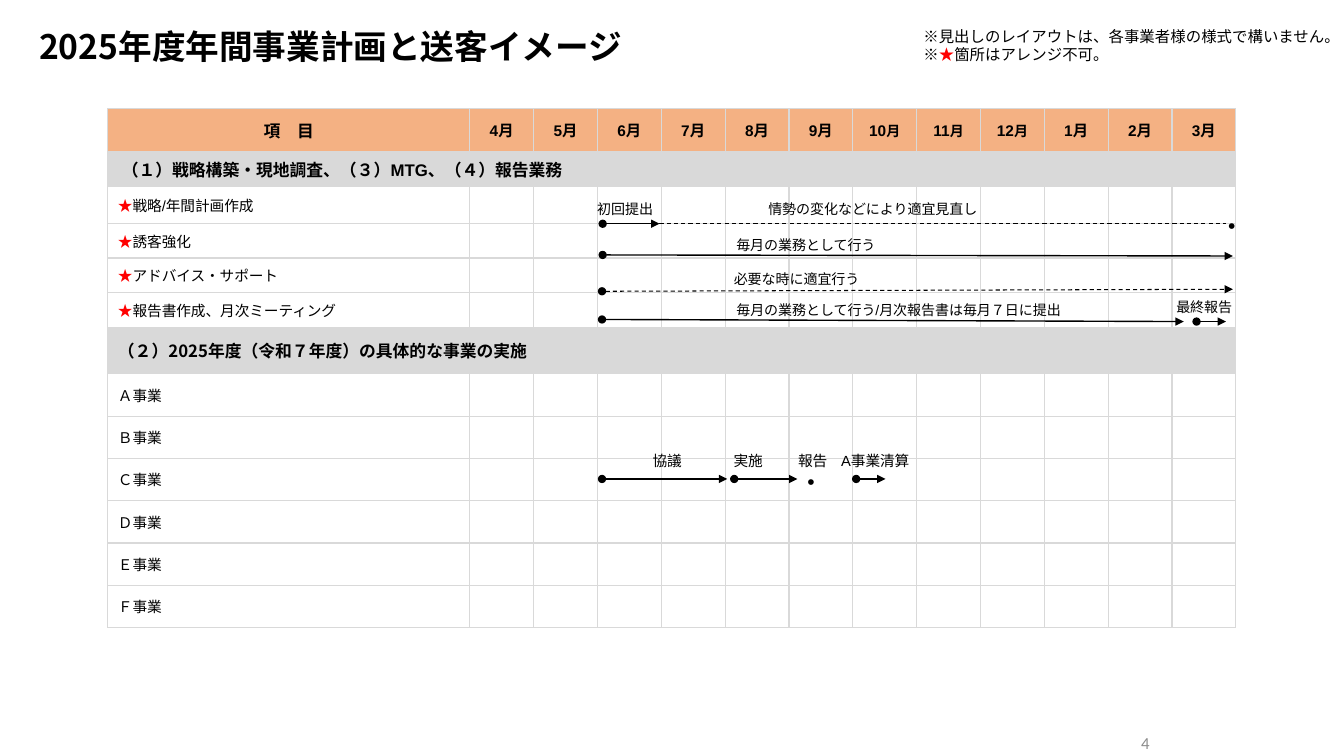
from dataclasses import dataclass
from itertools import accumulate

from lxml.etree import SubElement
from pptx import Presentation
from pptx.dml.color import RGBColor
from pptx.enum.dml import MSO_LINE
from pptx.enum.shapes import MSO_CONNECTOR
from pptx.enum.text import MSO_ANCHOR, MSO_AUTO_SIZE, PP_ALIGN
from pptx.oxml.ns import qn
from pptx.util import Inches, Pt


@dataclass(frozen=True)
class Theme:
    ink: str = "000000"
    star: str = "FF0000"
    header: str = "F4B183"
    band: str = "D9D9D9"
    white: str = "FFFFFF"
    muted: str = "8C8C8C"
    body: str = "Arial"
    gothic: str = "Noto Sans CJK JP"
    number: str = "Calibri"
    title_size: float = 24
    dot_size: float = 15
    section_size: float = 12
    month_size: float = 11
    item_size: float = 10.5
    label_size: float = 10


THEME = Theme()
LEFT, CENTER, RIGHT = PP_ALIGN.LEFT, PP_ALIGN.CENTER, PP_ALIGN.RIGHT

TITLE = "2025年度年間事業計画と送客イメージ"
NOTES = ["※見出しのレイアウトは、各事業者様の様式で構いません。", "※★箇所はアレンジ不可。"]
PAGE_NUMBER = "4"
HEADING = "項　目"
MONTHS = [4, 5, 6, 7, 8, 9, 10, 11, 12, 1, 2, 3]
SECTIONS = [
    (" （１）戦略構築・現地調査、（３）MTG、（４）報告業務", THEME.body,
     ["★戦略/年間計画作成", "★誘客強化", "★アドバイス・サポート", "★報告書作成、月次ミーティング"]),
    ("（２）2025年度（令和７年度）の具体的な事業の実施", THEME.gothic,
     [f"{letter}事業" for letter in "ＡＢＣＤＥＦ"]),
]

# Chart coordinates: months after the start of April, table rows from the top.
# Arrows: start month, start row, end month, end row, dashed, arrowheads
ARROWS = [
    (2.08, 3, 2.97, 3, False, True),
    (2.97, 3, 11.84, 3, True, False),
    (2.08, 3.91, 11.95, 3.94, False, True),
    (2.07, 4.97, 11.95, 4.91, True, True),
    (2.07, 5.77, 11.18, 5.83, False, True),
    (11.38, 5.83, 11.84, 5.83, False, True),
    (2.07, 9.48, 4.03, 9.48, False, True),
    (4.14, 9.48, 5.13, 9.48, False, True),
    (6.05, 9.48, 6.51, 9.48, False, True),
]
# Labels: text, month of the left edge or centre, top row, width in months, alignment, size
LABELS = [
    ("初回提出", 2.43, 2.24, 1.6, CENTER, THEME.label_size),
    ("情勢の変化などにより適宜見直し", 6.31, 2.24, 3.9, CENTER, THEME.label_size),
    ("毎月の業務として行う", 4.11, 3.24, 3.9, LEFT, THEME.label_size),
    ("必要な時に適宜行う", 4.07, 4.21, 3.9, LEFT, THEME.label_size),
    ("毎月の業務として行う/月次報告書は毎月７日に提出", 4.11, 5.11, 5.7, LEFT, THEME.label_size),
    ("最終報告", 11.5, 5.03, 1.6, CENTER, THEME.label_size),
    ("協議", 3.09, 8.74, 2.5, CENTER, THEME.item_size),
    ("実施", 4.36, 8.74, 1.6, CENTER, THEME.item_size),
    ("報告", 5.37, 8.74, 1.6, CENTER, THEME.item_size),
    ("A事業清算", 6.35, 8.74, 1.6, CENTER, THEME.item_size),
]
DOTS = [(5.13, 9.12), (11.72, 2.57)]

SLIDE_WIDTH, SLIDE_HEIGHT = 13.33, 7.5
TABLE_LEFT, TABLE_TOP, TABLE_WIDTH, ITEM_WIDTH = 1.07, 1.08, 11.19, 3.59
MONTH_WIDTH = (TABLE_WIDTH - ITEM_WIDTH) / len(MONTHS)
ROW_HEIGHTS = [0.42, 0.35, 0.37, 0.34, 0.34, 0.35, 0.46] + [0.42] * 6
ROW_TOPS = list(accumulate(ROW_HEIGHTS, initial=TABLE_TOP))


def chart_point(month, row):
    """Turn months and rows into inches on the slide."""
    index = int(row)
    x = TABLE_LEFT + ITEM_WIDTH + month * MONTH_WIDTH
    return x, ROW_TOPS[index] + (row - index) * ROW_HEIGHTS[index]


def style_run(run, size, face, color=THEME.ink, bold=False):
    run.font.size = Pt(size)
    run.font.name = face
    run.font.bold = bold
    run.font.color.rgb = RGBColor.from_string(color)
    SubElement(run.font._element, qn("a:ea")).set("typeface", THEME.gothic)


def write(paragraph, text, size, face, color=THEME.ink, bold=False, align=LEFT):
    """Write one line, with any star in red."""
    paragraph.alignment = align
    before, star, after = text.partition("★")
    for part in filter(None, (before, star, after)):
        run = paragraph.add_run()
        run.text = part
        style_run(run, size, face, THEME.star if part == "★" else color, bold)


def add_text(slide, box, lines, size, face, wrap=True, anchor=MSO_ANCHOR.TOP, **style):
    shape = slide.shapes.add_textbox(*map(Inches, box))
    frame = shape.text_frame
    frame.word_wrap = wrap
    frame.auto_size = MSO_AUTO_SIZE.SHAPE_TO_FIT_TEXT
    frame.vertical_anchor = anchor
    for index, line in enumerate(lines):
        paragraph = frame.add_paragraph() if index else frame.paragraphs[0]
        write(paragraph, line, size, face, **style)
    return frame


def finish_cell(cell, fill):
    cell.vertical_anchor = MSO_ANCHOR.MIDDLE
    properties = cell._tc.get_or_add_tcPr()
    for side in ("lnL", "lnR", "lnT", "lnB"):
        border = SubElement(properties, qn(f"a:{side}"), w=str(Pt(1)))
        SubElement(SubElement(border, qn("a:solidFill")), qn("a:srgbClr")).set("val", THEME.band)
    cell.fill.solid()
    cell.fill.fore_color.rgb = RGBColor.from_string(fill)
    paragraph = cell.text_frame.paragraphs[0]
    if not paragraph.runs:
        SubElement(paragraph._p, qn("a:endParaRPr"), sz=str(int(THEME.item_size * 100)))


def add_schedule(slide):
    rows, columns = len(ROW_HEIGHTS), len(MONTHS) + 1
    box = (TABLE_LEFT, TABLE_TOP, TABLE_WIDTH, sum(ROW_HEIGHTS))
    table = slide.shapes.add_table(rows, columns, *map(Inches, box)).table
    for row, height in zip(table.rows, ROW_HEIGHTS):
        row.height = Inches(height)
    for column, width in zip(table.columns, [ITEM_WIDTH] + [MONTH_WIDTH] * len(MONTHS)):
        column.width = Inches(width)

    def line(row, column=0):
        return table.cell(row, column).text_frame.paragraphs[0]

    fills = [THEME.header] + [THEME.white] * (rows - 1)
    write(line(0), HEADING, THEME.section_size, THEME.body, bold=True, align=CENTER)
    for column, month in enumerate(MONTHS, 1):
        write(line(0, column), str(month), THEME.month_size, THEME.body, bold=True, align=CENTER)
        size = THEME.label_size if month > 9 else THEME.month_size
        write(line(0, column), "月", size, THEME.body, bold=True, align=CENTER)
    row = 1
    for heading, face, items in SECTIONS:
        fills[row] = THEME.band
        table.cell(row, 0).merge(table.cell(row, columns - 1))
        write(line(row), heading, THEME.section_size, face, bold=True)
        for offset, item in enumerate(items, 1):
            write(line(row + offset), item, THEME.item_size, THEME.body)
        row += len(items) + 1
    for row, fill in enumerate(fills):
        for column in range(columns):
            finish_cell(table.cell(row, column), fill)


def add_arrow(slide, start_month, start_row, end_month, end_row, dashed, heads):
    ends = chart_point(start_month, start_row) + chart_point(end_month, end_row)
    connector = slide.shapes.add_connector(MSO_CONNECTOR.STRAIGHT, *map(Inches, ends))
    connector.line.color.rgb = RGBColor.from_string(THEME.ink)
    connector.line.width = Pt(0.75 if dashed else 1)
    if dashed:
        connector.line.dash_style = MSO_LINE.DASH
    if heads:
        outline = connector.line._get_or_add_ln()
        SubElement(outline, qn("a:headEnd"), type="oval")
        SubElement(outline, qn("a:tailEnd"), type="triangle")
    SubElement(connector._element.spPr, qn("a:effectLst"))


def add_label(slide, text, month, row, months_wide, align, size):
    x, y = chart_point(month, row)
    width = months_wide * MONTH_WIDTH
    left = x - width / 2 if align == CENTER else x
    frame = add_text(slide, (left, y, width, 0.23), [text], size, THEME.body,
                     anchor=MSO_ANCHOR.MIDDLE, align=align)
    frame.margin_left = frame.margin_right = Inches(0.04)
    frame.margin_top = frame.margin_bottom = Inches(0.02)
    frame.paragraphs[0].line_spacing = 1.2
    frame.paragraphs[0].space_before = Pt(10)


def main():
    presentation = Presentation()
    presentation.slide_width = Inches(SLIDE_WIDTH)
    presentation.slide_height = Inches(SLIDE_HEIGHT)
    slide = presentation.slides.add_slide(presentation.slide_layouts[6])
    add_schedule(slide)
    add_text(slide, (0.29, 0.21, 8.5, 0.5), [TITLE], THEME.title_size, THEME.gothic, bold=True)
    add_text(slide, (9.06, 0.22, 4.28, 0.47), NOTES, THEME.month_size, THEME.gothic, wrap=False)
    for arrow in ARROWS:
        add_arrow(slide, *arrow)
    for label in LABELS:
        add_label(slide, *label)
    for dot in DOTS:
        add_text(slide, (*chart_point(*dot), 0.3, 0.35), ["•"], THEME.dot_size, THEME.body)
    add_text(slide, (9.25, 7.22, 2.25, 0.3), [PAGE_NUMBER], THEME.section_size, THEME.number,
             anchor=MSO_ANCHOR.MIDDLE, color=THEME.muted, align=RIGHT)
    presentation.save("out.pptx")


if __name__ == "__main__":
    main()
